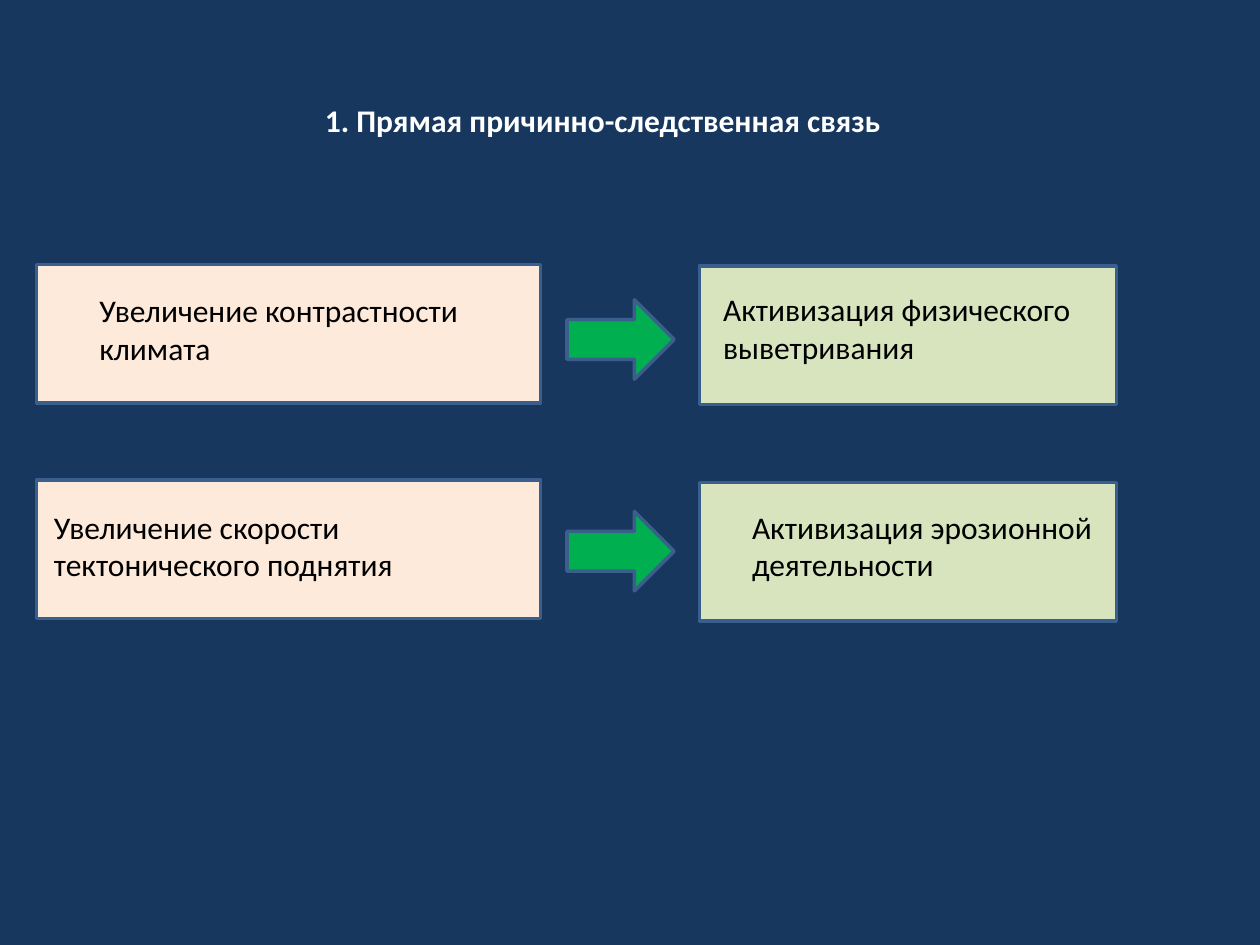
from dataclasses import dataclass

from pptx import Presentation
from pptx.dml.color import RGBColor
from pptx.enum.shapes import MSO_SHAPE
from pptx.enum.text import MSO_ANCHOR, MSO_AUTO_SIZE, PP_ALIGN
from pptx.util import Inches, Pt


@dataclass(frozen=True)
class Theme:
    background: str = "17375E"
    cause: str = "FDEADA"
    effect: str = "D7E4BD"
    arrow: str = "00B050"
    outline: str = "3A5F8C"
    title: str = "FFFFFF"
    text: str = "000000"
    font: str = "Calibri"
    size: int = 18
    line: int = 2


THEME = Theme()

# Columns as (left, width) and rows as tops, in inches
CAUSE_COL, ARROW_COL, EFFECT_COL = (0.29, 4), (4.5, 0.85), (5.55, 3.31)
CAUSE_ROWS, EFFECT_ROWS, ARROW_ROWS = (2.1, 3.81), (2.11, 3.83), (2.38, 4.06)
BOX_H, ARROW_H, LABEL_H = 1.1, 0.63, 0.71

# Each label: left, top, width, fill, lines
CAUSES = [
    (0.69, 2.26, 3.17, THEME.cause, ["Увеличение контрастности", "климата"]),
    (0.33, 3.98, 3.54, None, ["Увеличение скорости", "тектонического поднятия"]),
]
EFFECTS = [
    (5.64, 2.25, 3.05, None, ["Активизация физического", "выветривания"]),
    (5.87, 3.98, 2.99, None, ["Активизация эрозионной", "деятельности"]),
]


def rgb(value):
    return RGBColor.from_string(value)


def add_block(s, kind, column, top, height, fill):
    left, width = column
    sp = s.shapes.add_shape(kind, Inches(left), Inches(top), Inches(width), Inches(height))
    sp.shadow.inherit = False
    sp.fill.solid()
    sp.fill.fore_color.rgb = rgb(fill)
    sp.line.color.rgb = rgb(THEME.outline)
    sp.line.width = Pt(THEME.line)


def add_label(s, left, top, width, height, lines, color=THEME.text,
              fill=None, bold=False, spacing=None):
    sp = s.shapes.add_textbox(Inches(left), Inches(top), Inches(width), Inches(height))
    if fill:
        sp.fill.solid()
        sp.fill.fore_color.rgb = rgb(fill)
    tf = sp.text_frame
    tf.word_wrap = bool(fill)
    tf.auto_size = MSO_AUTO_SIZE.SHAPE_TO_FIT_TEXT
    tf.vertical_anchor = MSO_ANCHOR.TOP
    for i, line in enumerate(lines):
        p = tf.add_paragraph() if i else tf.paragraphs[0]
        p.alignment = PP_ALIGN.LEFT
        if spacing:
            p.line_spacing = spacing
        r = p.add_run()
        r.text = line
        r.font.name = THEME.font
        r.font.size = Pt(THEME.size)
        r.font.bold = bold
        r.font.color.rgb = rgb(color)


def main():
    prs = Presentation()
    prs.slide_width, prs.slide_height = Inches(10), Inches(7.5)
    s = prs.slides.add_slide(prs.slide_layouts[6])
    s.background.fill.solid()
    s.background.fill.fore_color.rgb = rgb(THEME.background)

    # Cause and effect boxes
    for cause_top, effect_top in zip(CAUSE_ROWS, EFFECT_ROWS):
        add_block(s, MSO_SHAPE.RECTANGLE, CAUSE_COL, cause_top, BOX_H, THEME.cause)
        add_block(s, MSO_SHAPE.RECTANGLE, EFFECT_COL, effect_top, BOX_H, THEME.effect)

    # Title
    add_label(s, 2.48, 0.6, 4.66, 0.51, ["1. Прямая причинно-следственная связь"],
              color=THEME.title, bold=True, spacing=1.5)

    # Labels over the boxes
    for pair in zip(CAUSES, EFFECTS):
        for left, top, width, fill, lines in pair:
            add_label(s, left, top, width, LABEL_H, lines, fill=fill)

    # Arrows from cause to effect
    for top in ARROW_ROWS:
        add_block(s, MSO_SHAPE.RIGHT_ARROW, ARROW_COL, top, ARROW_H, THEME.arrow)

    prs.save("out.pptx")


if __name__ == "__main__":
    main()
